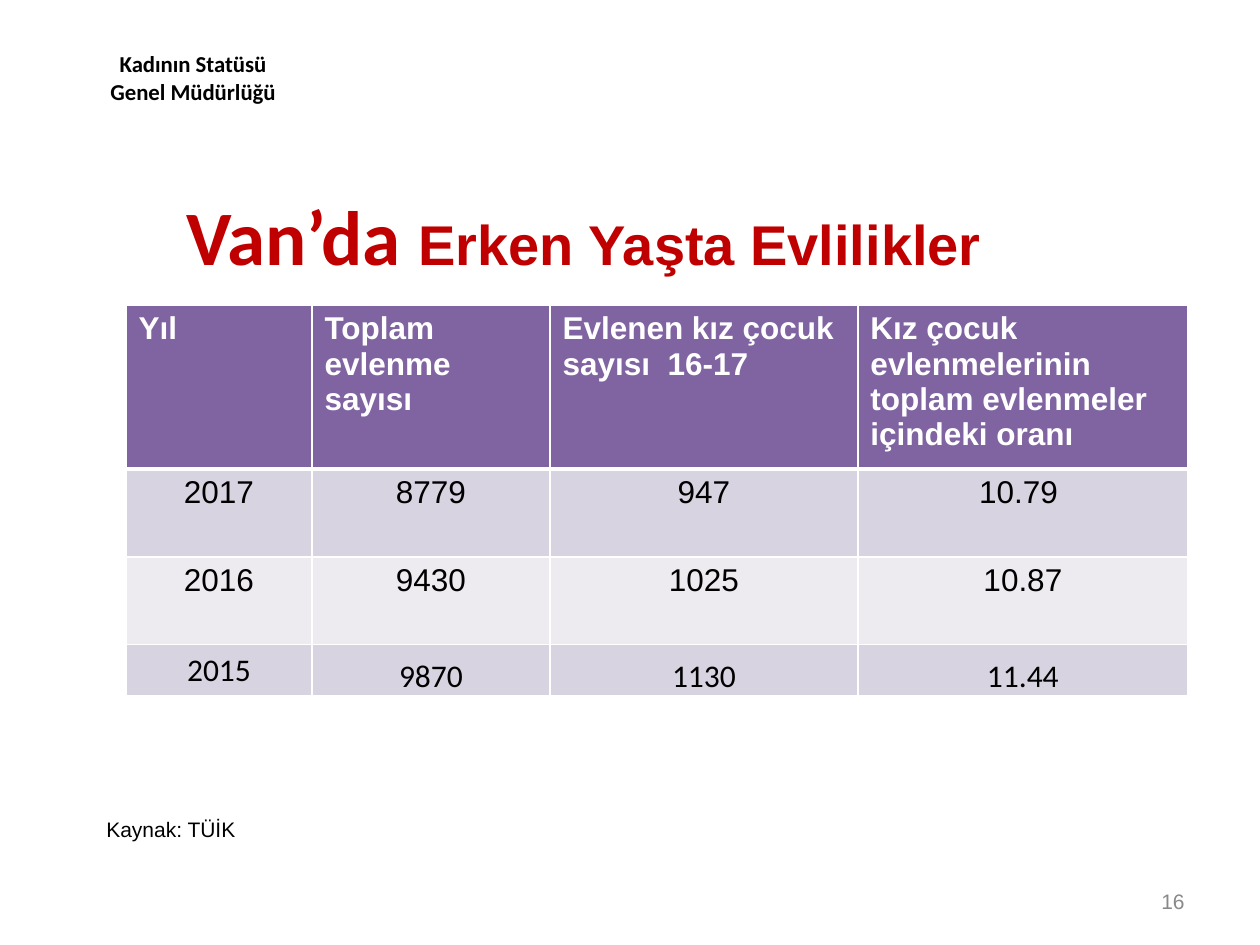
from lxml.etree import SubElement
from pptx import Presentation
from pptx.dml.color import RGBColor
from pptx.enum.text import MSO_ANCHOR, MSO_AUTO_SIZE, PP_ALIGN
from pptx.oxml.ns import qn
from pptx.util import Emu, Pt

EMU_PER_PX = 914400 / 126
BLACK, WHITE, RED, GREY = "000000", "FFFFFF", "C00000", "898989"
PURPLE, BAND_DARK, BAND_LIGHT = "8064A2", "D8D3E0", "EDEAF0"

HEADINGS = ["Yıl", "Toplam evlenme sayısı", "Evlenen kız çocuk sayısı  16-17",
            "Kız çocuk evlenmelerinin toplam evlenmeler içindeki oranı"]
MARRIAGES = [["2017", "8779", "947", "10.79 "],
             ["2016", "9430", "1025", "10.87"],
             ["2015", "9870", "1130", "11.44"]]
COLUMN_WIDTHS = [186, 238, 308, 330]
ROW_HEIGHTS = [163, 88, 88, 51]


def px(length):
    return Emu(round(length * EMU_PER_PX))


def colour(value):
    return RGBColor.from_string(value)


def add_run(para, text, size, ink=BLACK, bold=False, font="Arial"):
    span = para.add_run()
    span.text = text
    span.font.name = font
    span.font.size = Pt(size)
    span.font.bold = bold
    span.font.color.rgb = colour(ink)


def add_text(page, place, text, size, align=PP_ALIGN.LEFT,
             anchor=MSO_ANCHOR.TOP, **style):
    box = page.shapes.add_textbox(*map(px, place))
    frame = box.text_frame
    frame.word_wrap = True
    frame.vertical_anchor = anchor
    para = frame.paragraphs[0]
    para.alignment = align
    add_run(para, text, size, **style)


def add_title(page):
    title = page.shapes.title
    title.left, title.top, title.width, title.height = map(px, (3, 195, 1162, 79))
    frame = title.text_frame
    frame.auto_size = MSO_AUTO_SIZE.NONE
    frame.vertical_anchor = MSO_ANCHOR.MIDDLE
    para = frame.paragraphs[0]
    para.alignment = PP_ALIGN.CENTER
    add_run(para, "Van’da ", 44, RED, True, "Calibri")
    add_run(para, "Erken Yaşta Evlilikler", 32, RED, True)


def set_borders(cell, top=1, bottom=1):
    properties = cell._tc.get_or_add_tcPr()
    for side, width in (("L", 1), ("R", 1), ("T", top), ("B", bottom)):
        line = SubElement(properties, qn(f"a:ln{side}"), w=str(Pt(width)))
        fill = SubElement(line, qn("a:solidFill"))
        SubElement(fill, qn("a:srgbClr"), val=WHITE)


def fill_cell(cell, text, fill, align, **style):
    cell.fill.solid()
    cell.fill.fore_color.rgb = colour(fill)
    para = cell.text_frame.paragraphs[0]
    para.alignment = align
    add_run(para, text, 18, **style)


def add_marriage_table(page):
    rows = [HEADINGS] + MARRIAGES
    frame = page.shapes.add_table(len(rows), len(HEADINGS), px(126), px(305),
                                  px(sum(COLUMN_WIDTHS)), px(sum(ROW_HEIGHTS)))
    table = frame.table
    for column, width in zip(table.columns, COLUMN_WIDTHS):
        column.width = px(width)
    for row, height in zip(table.rows, ROW_HEIGHTS):
        row.height = px(height)

    # Header row with a thick rule below
    for index, heading in enumerate(HEADINGS):
        cell = table.cell(0, index)
        set_borders(cell, bottom=3)
        fill_cell(cell, heading, PURPLE, PP_ALIGN.LEFT, ink=WHITE, bold=True)

    # Banded data rows; the last one is in Calibri
    last = len(MARRIAGES)
    for number, values in enumerate(MARRIAGES, 1):
        band = BAND_DARK if number % 2 else BAND_LIGHT
        font = "Calibri" if number == last else "Arial"
        for index, value in enumerate(values):
            cell = table.cell(number, index)
            set_borders(cell, top=3 if number == 1 else 1)
            fill_cell(cell, value, band, PP_ALIGN.CENTER, font=font)
            if number == last and index:
                cell.vertical_anchor = MSO_ANCHOR.BOTTOM
                cell.margin_left = cell.margin_right = cell.margin_top = px(1)
                cell.margin_bottom = 0


def main():
    deck = Presentation()
    deck.slide_width, deck.slide_height = px(1260), px(945)
    page = deck.slides.add_slide(deck.slide_layouts[5])

    # Department name and title
    add_text(page, (84, 44, 218, 68), "Kadının Statüsü Genel Müdürlüğü", 13,
             PP_ALIGN.CENTER, bold=True, font="Calibri")
    add_title(page)

    # Figures
    add_marriage_table(page)

    # Source and page number
    add_text(page, (94, 810, 228, 38), "Kaynak: TÜİK", 12)
    add_text(page, (903, 876, 294, 50), "16", 12, PP_ALIGN.RIGHT,
             MSO_ANCHOR.MIDDLE, ink=GREY)

    deck.save("out.pptx")


if __name__ == "__main__":
    main()
